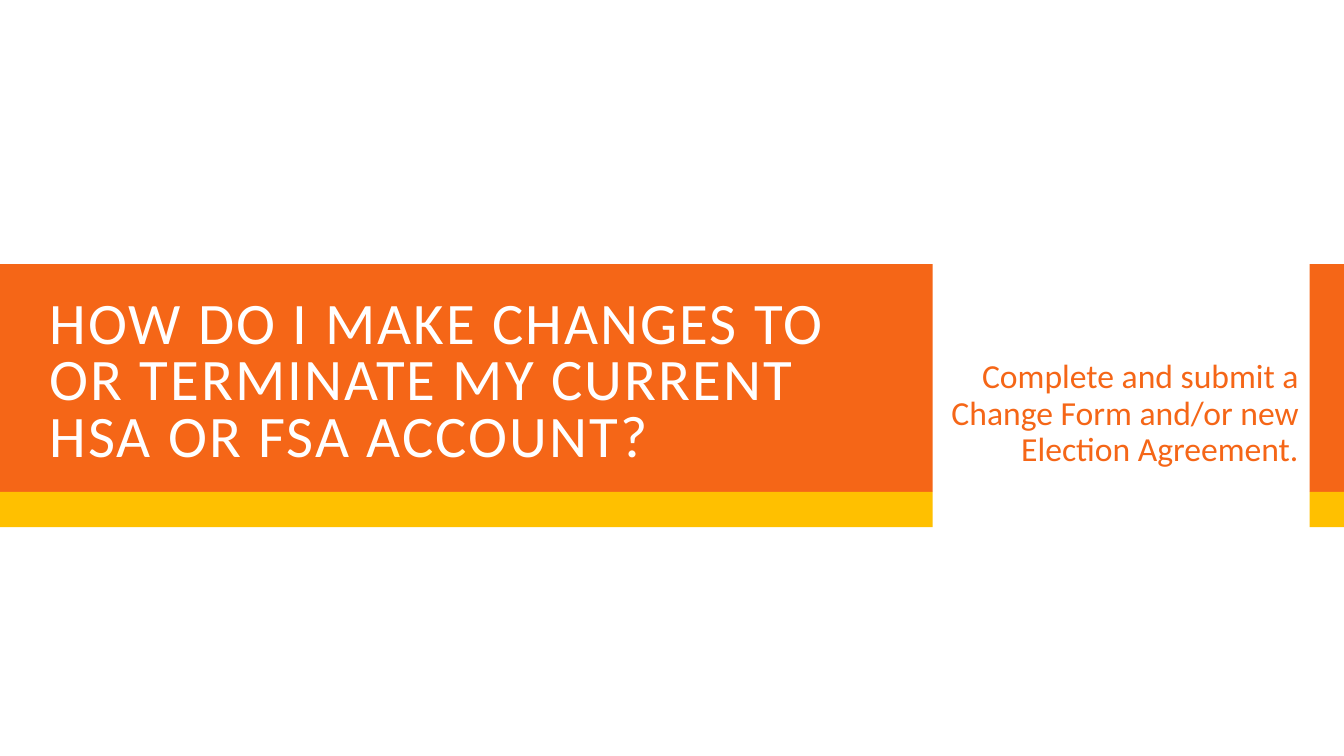
from dataclasses import dataclass

from pptx import Presentation
from pptx.dml.color import RGBColor
from pptx.enum import shapes, text
from pptx.util import Inches, Pt


@dataclass(frozen=True)
class Theme:
    orange: str = "F56617"
    gold: str = "FFC000"
    white: str = "FFFFFF"
    font: str = "Calibri"
    head: int = 42
    body: int = 24


@dataclass(frozen=True)
class Box:
    left: float
    top: float
    width: float
    height: float

    def lengths(self):
        return [Inches(n) for n in (self.left, self.top, self.width, self.height)]


@dataclass(frozen=True)
class Copy:
    words: str
    box: Box
    size: int
    color: str
    align: text.PP_ALIGN
    line: float
    after: int = 0
    track: int = 0  # letter spacing in hundredths of a point


@dataclass(frozen=True)
class Band:
    top: float
    height: float
    color: str


THEME = Theme()
WIDTH, HEIGHT = 13.33, 7.5
SPANS = [(0, 9.25), (12.99, WIDTH)]
BANDS = [Band(2.62, 2.26, THEME.orange), Band(4.88, 0.35, THEME.gold)]
TITLE = Copy(
    "HOW DO I MAKE CHANGES TO OR TERMINATE MY CURRENT HSA OR FSA ACCOUNT?",
    Box(0.39, 2.8, 8.51, 1.9), THEME.head, THEME.white,
    text.PP_ALIGN.LEFT, 0.8, track=150,
)
ANSWER = Copy(
    "Complete and submit a Change Form and/or new Election Agreement.",
    Box(9.25, 2.8, 3.73, 1.9), THEME.body, THEME.orange,
    text.PP_ALIGN.RIGHT, 0.9, after=6,
)


def add_block(slide, box: Box, color: str) -> None:
    block = slide.shapes.add_shape(shapes.MSO_SHAPE.RECTANGLE, *box.lengths())
    block.shadow.inherit = False
    block.fill.solid()
    block.fill.fore_color.rgb = RGBColor.from_string(color)
    block.line.fill.background()


def fill_text(holder, copy: Copy) -> None:
    holder.left, holder.top, holder.width, holder.height = copy.box.lengths()
    frame = holder.text_frame
    frame.text = copy.words
    frame.word_wrap = True
    frame.auto_size = text.MSO_AUTO_SIZE.NONE
    frame.vertical_anchor = text.MSO_ANCHOR.BOTTOM
    para = frame.paragraphs[0]
    para.alignment = copy.align
    para.line_spacing = copy.line
    para.space_before, para.space_after = Pt(0), Pt(copy.after)
    font = para.font
    font.name, font.size, font.bold = THEME.font, Pt(copy.size), False
    font.color.rgb = RGBColor.from_string(copy.color)
    if copy.track:
        para.runs[0]._r.get_or_add_rPr().set("spc", str(copy.track))


def main() -> None:
    deck = Presentation()
    deck.slide_width, deck.slide_height = Inches(WIDTH), Inches(HEIGHT)
    slide = deck.slides.add_slide(deck.slide_layouts.get_by_name("Section Header"))
    tree = slide.shapes._spTree
    holders = list(slide.placeholders)
    for band in BANDS:
        for start, end in SPANS:
            add_block(slide, Box(start, band.top, end - start, band.height), band.color)
    for holder, copy in zip(holders, (TITLE, ANSWER)):
        fill_text(holder, copy)
        tree.append(holder._element)  # bring the text in front of the bands
    deck.save("out.pptx")


if __name__ == "__main__":
    main()
